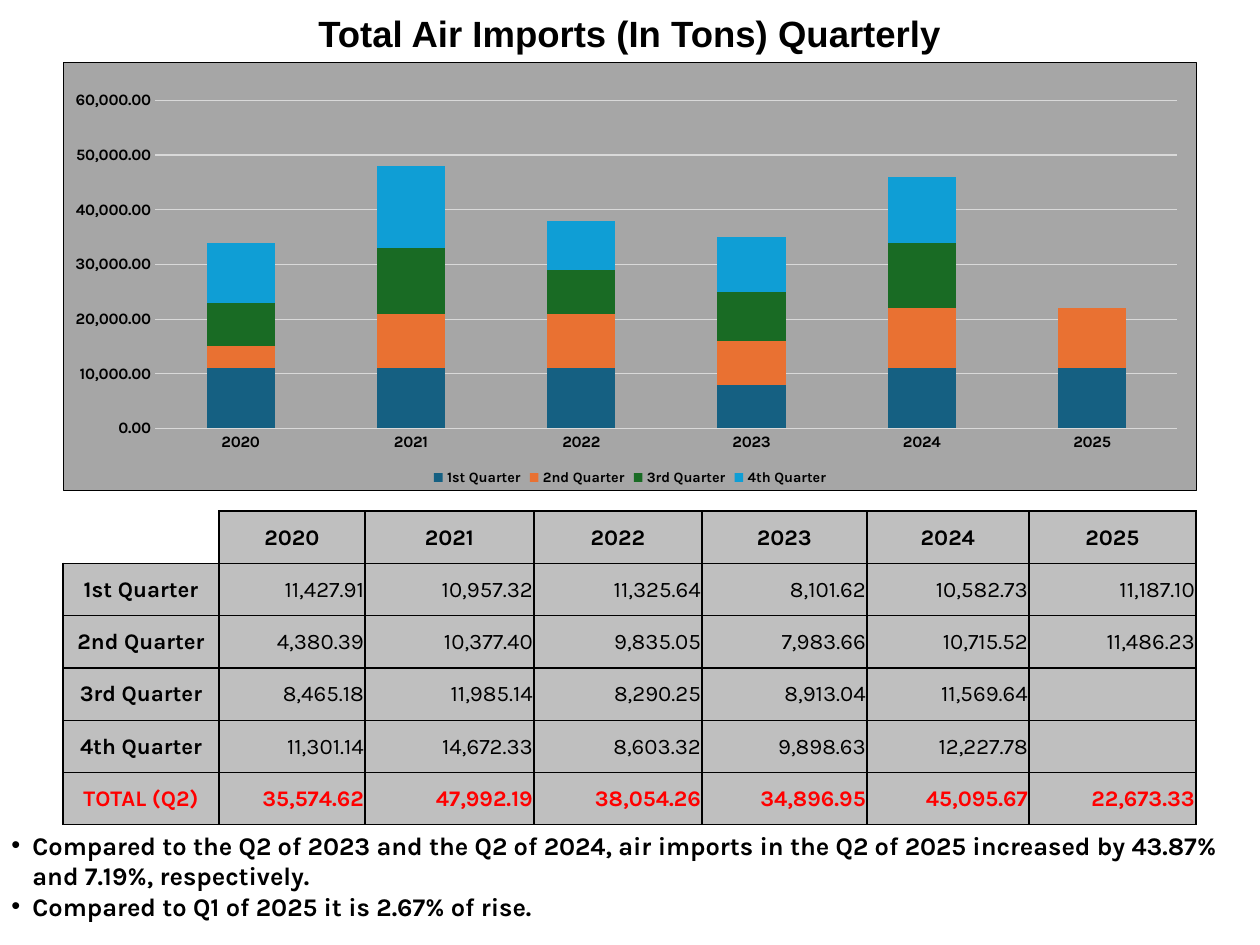
from lxml import etree
from pptx import Presentation
from pptx.chart.data import CategoryChartData
from pptx.dml.color import RGBColor
from pptx.enum.chart import XL_CHART_TYPE, XL_LEGEND_POSITION, XL_TICK_MARK
from pptx.enum.text import MSO_ANCHOR, MSO_AUTO_SIZE, PP_ALIGN
from pptx.oxml import parse_xml
from pptx.oxml.ns import nsdecls, qn
from pptx.util import Pt

STACKED = XL_CHART_TYPE.COLUMN_STACKED
LEGEND_BOTTOM = XL_LEGEND_POSITION.BOTTOM
NO_TICK = XL_TICK_MARK.NONE
MIDDLE, TOP = MSO_ANCHOR.MIDDLE, MSO_ANCHOR.TOP
NO_AUTOFIT = MSO_AUTO_SIZE.NONE
LEFT, CENTER, RIGHT = PP_ALIGN.LEFT, PP_ALIGN.CENTER, PP_ALIGN.RIGHT

EMU_PER_PX = 8000
BLACK, RED = "000000", "FF0000"
CELL_GRAY, CHART_GRAY, GRID_GRAY = "BFBFBF", "A6A6A6", "D9D9D9"
NUMBER_FORMAT = "#,##0.00"
CHART_WIDTH, CHART_HEIGHT = 1134, 429

YEARS = ["2020", "2021", "2022", "2023", "2024", "2025"]
QUARTERS = {
    "1st Quarter": [11427.91, 10957.32, 11325.64, 8101.62, 10582.73, 11187.10],
    "2nd Quarter": [4380.39, 10377.40, 9835.05, 7983.66, 10715.52, 11486.23],
    "3rd Quarter": [8465.18, 11985.14, 8290.25, 8913.04, 11569.64, None],
    "4th Quarter": [11301.14, 14672.33, 8603.32, 9898.63, 12227.78, None],
}
QUARTER_COLORS = ["156082", "E97132", "196B24", "0F9ED5"]
COLUMN_WIDTHS = [156, 146, 169, 168, 165, 162, 167]
FINDINGS = [
    "Compared to the Q2 of 2023 and the Q2 of 2024, air imports in the Q2 of 2025 "
    "increased by 43.87% and 7.19%, respectively.",
    "Compared to Q1 of 2025 it is 2.67% of rise.",
]


def px(length):
    return length * EMU_PER_PX


def rgb(color):
    return RGBColor.from_string(color)


def style_font(font, size, color=BLACK, bold=True, name="Karla"):
    font.size = Pt(size)
    font.bold = bold
    font.name = name
    font.color.rgb = rgb(color)


def style_line(line, color):
    line.color.rgb = rgb(color)
    line.width = Pt(0.75)


def add_run(paragraph, text, alignment, size, **font_options):
    paragraph.alignment = alignment
    run = paragraph.add_run()
    run.text = text
    style_font(run.font, size, **font_options)


def prepare_placeholder(shape, left, top, width, height, anchor):
    shape.left, shape.top = px(left), px(top)
    shape.width, shape.height = px(width), px(height)
    frame = shape.text_frame
    frame.auto_size = NO_AUTOFIT
    frame.word_wrap = True
    frame.vertical_anchor = anchor
    return frame


def fill_title(shape):
    frame = prepare_placeholder(shape, 63, 0, 1134, 63, MIDDLE)
    frame.margin_left = frame.margin_right = frame.margin_bottom = 0
    frame.margin_top = px(3)
    add_run(frame.paragraphs[0], "Total Air Imports (In Tons) Quarterly", CENTER, 23, name="Arial")


def fill_findings(shape):
    frame = prepare_placeholder(shape, 0, 824, 1260, 121, TOP)
    for index, finding in enumerate(FINDINGS):
        paragraph = frame.add_paragraph() if index else frame.paragraphs[0]
        paragraph.space_before = Pt(0)
        properties = paragraph._p.get_or_add_pPr()
        properties.set("marL", str(px(21)))
        properties.set("indent", str(px(-21)))
        etree.SubElement(properties, qn("a:buFont")).set("typeface", "Arial")
        etree.SubElement(properties, qn("a:buChar")).set("char", "•")
        add_run(paragraph, finding, LEFT, 16)


def style_chart_area(chart):
    """Give the chart its background and border, and fix the plot's inner frame."""
    chart._chartSpace.find(qn("c:chart")).addnext(parse_xml(
        f'<c:spPr {nsdecls("c", "a")}>'
        f'<a:solidFill><a:srgbClr val="{CHART_GRAY}"/></a:solidFill>'
        f'<a:ln w="9525"><a:solidFill><a:srgbClr val="{BLACK}"/></a:solidFill></a:ln>'
        '</c:spPr>'))
    plot_area = chart._chartSpace.find(".//" + qn("c:plotArea"))
    for old_layout in plot_area.findall(qn("c:layout")):
        plot_area.remove(old_layout)
    settings = [("layoutTarget", "inner"), ("xMode", "edge"), ("yMode", "edge"),
                ("x", 92 / CHART_WIDTH), ("y", 38 / CHART_HEIGHT),
                ("w", 1023 / CHART_WIDTH), ("h", 329 / CHART_HEIGHT)]
    layout = etree.Element(qn("c:layout"))
    manual = etree.SubElement(layout, qn("c:manualLayout"))
    for name, value in settings:
        etree.SubElement(manual, qn("c:" + name)).set("val", str(value))
    plot_area.insert(0, layout)


def style_axes(chart):
    category_axis, value_axis = chart.category_axis, chart.value_axis
    for axis in (category_axis, value_axis):
        axis.major_tick_mark = axis.minor_tick_mark = NO_TICK
        style_font(axis.tick_labels.font, 10)
    style_line(category_axis.format.line, GRID_GRAY)
    value_axis.format.line.fill.background()
    value_axis.has_major_gridlines = True
    style_line(value_axis.major_gridlines.format.line, GRID_GRAY)
    value_axis.minimum_scale, value_axis.maximum_scale = 0, 60000
    value_axis.major_unit = 10000
    value_axis.tick_labels.number_format = NUMBER_FORMAT
    value_axis.tick_labels.number_format_is_linked = False


def add_imports_chart(slide):
    """Add the stacked columns, with tons rounded to thousands."""
    data = CategoryChartData(number_format=NUMBER_FORMAT)
    data.categories = YEARS
    for quarter, values in QUARTERS.items():
        data.add_series(quarter, [round(tons, -3) if tons else None for tons in values])
    chart = slide.shapes.add_chart(STACKED, px(63), px(62), px(CHART_WIDTH),
                                   px(CHART_HEIGHT), data).chart
    chart.has_title = False
    style_font(chart.font, 10, bold=False)
    style_chart_area(chart)
    style_axes(chart)
    plot = chart.plots[0]
    plot.gap_width, plot.overlap = 150, 100
    plot.vary_by_categories = False
    for series, color in zip(plot.series, QUARTER_COLORS):
        series.format.fill.solid()
        series.format.fill.fore_color.rgb = rgb(color)
    chart.has_legend = True
    chart.legend.position = LEGEND_BOTTOM
    chart.legend.include_in_layout = False
    style_font(chart.legend.font, 9)


def set_borders(cell, visible_sides):
    properties = cell._tc.get_or_add_tcPr()
    for side in "LRTB":
        line = etree.SubElement(properties, qn("a:ln" + side), w=str(Pt(1)))
        if side in visible_sides:
            fill = etree.SubElement(line, qn("a:solidFill"))
            etree.SubElement(fill, qn("a:srgbClr"), val=BLACK)
        else:
            etree.SubElement(line, qn("a:noFill"))


def fill_cell(cell, text, alignment, color, bold):
    set_borders(cell, "LRTB")
    cell.fill.solid()
    cell.fill.fore_color.rgb = rgb(CELL_GRAY)
    cell.vertical_anchor = MIDDLE
    cell.margin_left = cell.margin_right = cell.margin_top = px(1)
    cell.margin_bottom = 0
    if text:
        add_run(cell.text_frame.paragraphs[0], text, alignment, 14, color=color, bold=bold)


def add_imports_table(slide):
    totals = [sum(tons or 0 for tons in year) for year in zip(*QUARTERS.values())]
    records = [*QUARTERS.items(), ("TOTAL (Q2)", totals)]
    rows = [["", *YEARS]]
    for label, values in records:
        rows.append([label, *(f"{tons:,.2f}" if tons else "" for tons in values)])
    height = px(314)
    table = slide.shapes.add_table(len(rows), len(COLUMN_WIDTHS), px(63), px(511),
                                   px(sum(COLUMN_WIDTHS)), height).table
    for column, width in zip(table.columns, COLUMN_WIDTHS):
        column.width = px(width)
    for row_index, texts in enumerate(rows):
        table.rows[row_index].height = height // len(rows)
        is_total = row_index == len(records)
        for column_index, text in enumerate(texts):
            is_header = row_index == 0 or column_index == 0
            if row_index or column_index:
                fill_cell(table.cell(row_index, column_index), text,
                          CENTER if is_header else RIGHT,
                          RED if is_total else BLACK, is_header or is_total)
    corner = table.cell(0, 0)
    set_borders(corner, "RB")
    corner.fill.background()


def main():
    presentation = Presentation()
    presentation.slide_width, presentation.slide_height = px(1260), px(945)
    slide = presentation.slides.add_slide(presentation.slide_layouts[1])
    fill_title(slide.shapes.title)
    fill_findings(slide.placeholders[1])
    add_imports_table(slide)
    add_imports_chart(slide)
    presentation.save("out.pptx")


if __name__ == "__main__":
    main()
